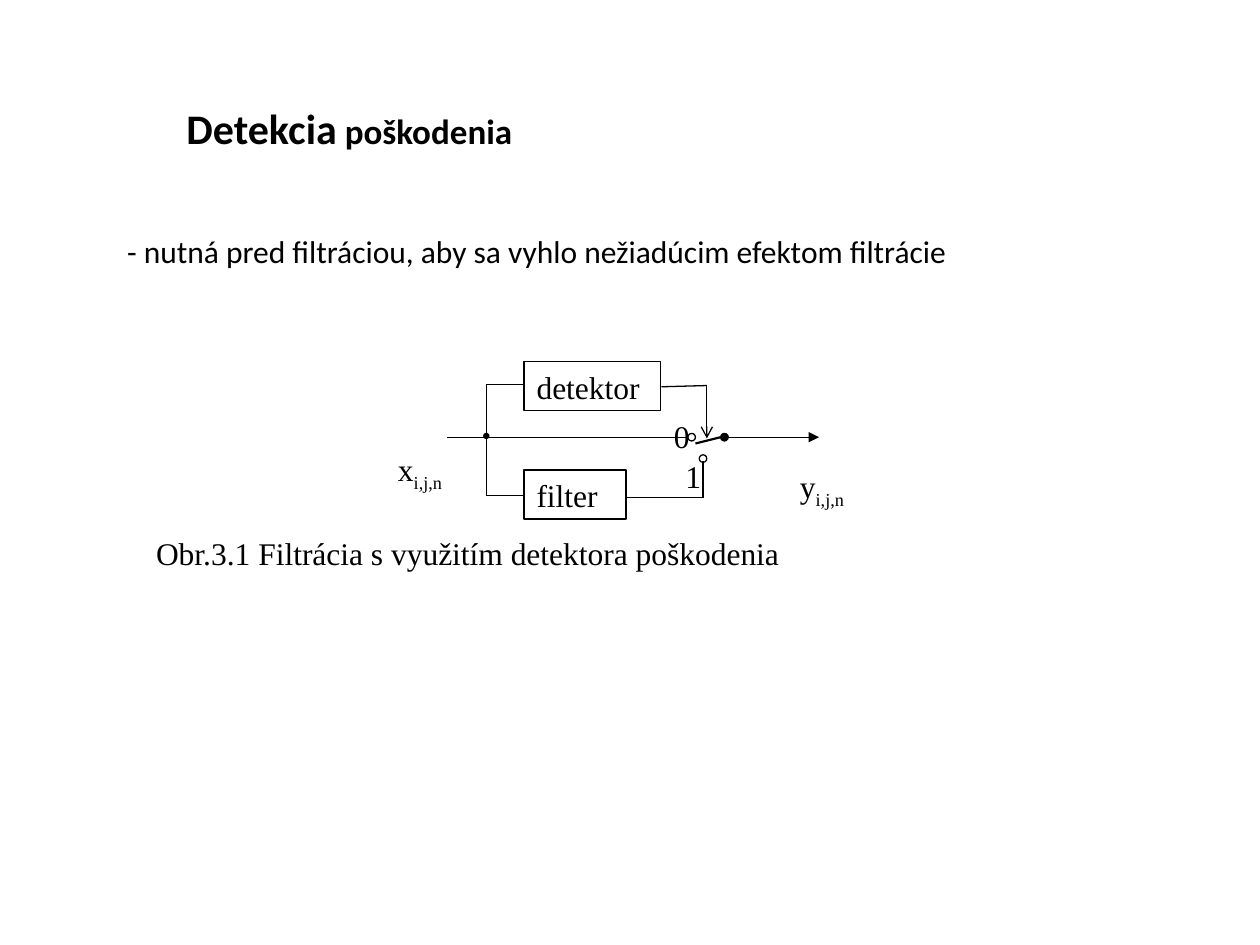
from typing import NamedTuple

from pptx import Presentation
from pptx import util as u
from pptx.dml.color import RGBColor
from pptx.enum import shapes, text
from pptx.oxml.ns import qn
from lxml import etree

COLS, ROWS = 100, 75  # slide grid
BLACK = "000000"
SERIF, SANS = "Times New Roman", "Calibri"
THIN, THICK = 0.75, 1.25

prs = Presentation()
prs.slide_width, prs.slide_height = u.Inches(10), u.Inches(7.5)
s = prs.slides.add_slide(prs.slide_layouts[5])


class Run(NamedTuple):
    text: str
    size: int = 18
    font: str = SERIF
    bold: bool = False
    baseline: int = 0


class Box(NamedTuple):
    col: float
    row: float
    cols: float
    rows: float
    runs: tuple


class Dot(NamedTuple):
    col: float
    row: float
    size: float
    filled: bool


class Wire(NamedTuple):
    points: tuple
    head: str = ""
    width: float = THIN


def x(col: float) -> int:
    return round(prs.slide_width * col / COLS)


def y(row: float) -> int:
    return round(prs.slide_height * row / ROWS)


def rgb(value: str) -> RGBColor:
    return RGBColor.from_string(value)


def write(sp, runs: tuple, align=text.PP_ALIGN.LEFT) -> None:
    tf = sp.text_frame
    frame_format = {"word_wrap": True, "auto_size": text.MSO_AUTO_SIZE.NONE,
                    "vertical_anchor": text.MSO_ANCHOR.TOP}
    for name, value in frame_format.items():
        setattr(tf, name, value)
    p = tf.paragraphs[0]
    p.alignment = align
    for run in runs:
        r = p.add_run()
        r.text = run.text
        font_format = {"size": u.Pt(run.size), "name": run.font, "bold": run.bold}
        for name, value in font_format.items():
            setattr(r.font, name, value)
        r.font.color.rgb = rgb(BLACK)
        if run.baseline:
            r.font._element.set("baseline", str(run.baseline * 1000))


def outline(sp, width: float = THIN) -> None:
    sp.line.color.rgb = rgb(BLACK)
    sp.line.width = u.Pt(width)


def area(b: Box) -> tuple:
    return x(b.col), y(b.row), x(b.cols), y(b.rows)


def draw_block(b: Box) -> None:
    sp = s.shapes.add_shape(shapes.MSO_SHAPE.RECTANGLE, *area(b))
    sp.shadow.inherit = False
    sp.fill.background()
    outline(sp)
    write(sp, b.runs, text.PP_ALIGN.JUSTIFY)


def draw_label(b: Box) -> None:
    write(s.shapes.add_textbox(*area(b)), b.runs)


def draw_dot(d: Dot) -> None:
    """Draw a circle centred on a grid point."""
    sp = s.shapes.add_shape(shapes.MSO_SHAPE.OVAL, x(d.col - d.size / 2),
                            y(d.row - d.size / 2), x(d.size), y(d.size))
    sp.shadow.inherit = False
    if d.filled:
        sp.fill.solid()
        sp.fill.fore_color.rgb = rgb(BLACK)
    else:
        sp.fill.background()
    outline(sp)


def draw_wire(w: Wire) -> None:
    """Join the points in turn; an arrowhead goes on the last segment."""
    for start, end in zip(w.points, w.points[1:]):
        sp = s.shapes.add_connector(shapes.MSO_CONNECTOR.STRAIGHT, x(start[0]),
                                    y(start[1]), x(end[0]), y(end[1]))
        outline(sp, w.width)
        etree.SubElement(sp._element.spPr, qn("a:effectLst"))
    if w.head:
        etree.SubElement(sp.line._get_or_add_ln(), qn("a:tailEnd"), type=w.head)


def indexed(letter: str) -> tuple:
    return Run(letter), Run("i,j,n", baseline=-25)


# Title
title = s.shapes.title
title_box = Box(13.8, 7.6, 50.4, 5, (Run("Detekcia", 24, SANS, True),
                                     Run(" poškodenia", 20, SANS, True)))
for name, value in zip(("left", "top", "width", "height"), area(title_box)):
    setattr(title, name, value)
write(title, title_box.runs)

# Diagram: main signal row, branch column and switch column
SIGNAL, BRANCH, SWITCH = 34.7, 38.6, 56.1
BLOCK_LEFT, BLOCK_ROWS = 41.6, 3.9

blocks = (
    Box(BLOCK_LEFT, 28.7, 10.8, BLOCK_ROWS, (Run("detektor"),)),
    Box(BLOCK_LEFT, 37.3, 8.1, BLOCK_ROWS, (Run("filter"),)),
)
wires = (
    Wire(((35.5, SIGNAL), (54.6, SIGNAL))),
    Wire(((BRANCH, SIGNAL), (BRANCH, 30.5), (BLOCK_LEFT, 30.5))),
    Wire(((BRANCH, SIGNAL), (BRANCH, 39.3), (BLOCK_LEFT, 39.3))),
    Wire(((49.7, 39.5), (55.8, 39.5), (55.8, 36.6))),
    Wire(((52.5, 30.7), (SWITCH, 30.6), (SWITCH, 34.8)), "arrow"),
    Wire(((57.7, SIGNAL), (65, SIGNAL)), "triangle"),
    Wire(((55.2, 35.2), (57.2, SIGNAL)), width=THICK),
)
dots = (
    Dot(BRANCH, 34.6, 0.4, True),
    Dot(54.9, SIGNAL, 0.6, False),
    Dot(55.8, 36.4, 0.6, False),
    Dot(57.5, SIGNAL, 0.6, True),
)

# Signal names, switch positions, caption and body line
labels = (
    Box(30.6, 35.2, 8.2, 3.9, indexed("x")),
    Box(62.5, 36.6, 7.2, 3.9, indexed("y")),
    Box(52.5, 32.6, 3.6, 3.5, (Run("0"),)),
    Box(53.4, 35.8, 5.2, 3.5, (Run("1"),)),
    Box(11.4, 41.9, 67.7, 4.4,
        (Run("Obr.3.1 Filtrácia s využitím detektora poškodenia"),)),
    Box(9.1, 17.9, 81.9, 4,
        (Run("- nutná pred filtráciou, aby sa vyhlo nežiadúcim efektom filtrácie",
             font=SANS),)),
)

for draw, items in ((draw_block, blocks), (draw_wire, wires),
                    (draw_dot, dots), (draw_label, labels)):
    for item in items:
        draw(item)

prs.save("out.pptx")
